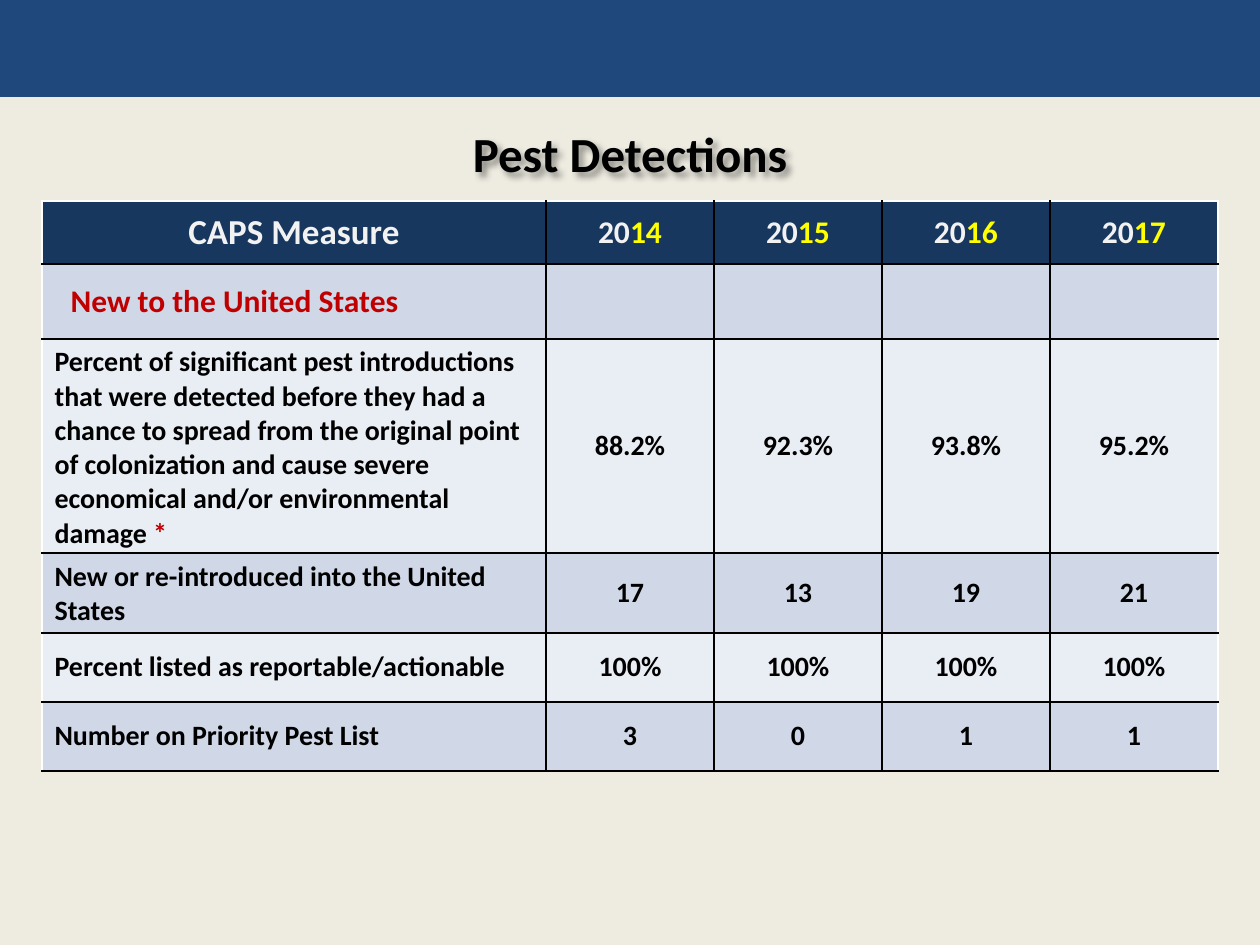
from lxml.etree import SubElement
from pptx import Presentation
from pptx.dml.color import RGBColor
from pptx.enum.shapes import MSO_SHAPE as Shape
from pptx.enum.text import MSO_ANCHOR as Anchor, PP_ALIGN as Align
from pptx.oxml import parse_xml
from pptx.oxml.ns import nsdecls, qn
from pptx.util import Pt

EMU_PER_PX = 914400 / 126
WIDTH, HEIGHT = 1260, 945
BLACK, WHITE, PALE, RED, YELLOW = "000000", "FFFFFF", "F2F2F2", "C00000", "FFFF00"
NAVY, BANDS = "17375E", ("D0D8E8", "E9EDF4")

YEARS = ("14", "15", "16", "17")
SECTION = "New to the United States"
MEASURES = [
    ("Percent of significant pest introductions that were detected before they "
     "had a chance to spread from the original point of colonization and cause "
     "severe economical and/or environmental damage ",
     ("88.2%", "92.3%", "93.8%", "95.2%")),
    ("New or re-introduced into the United States", ("17", "13", "19", "21")),
    ("Percent listed as reportable/actionable", ("100%",) * 4),
    ("Number on Priority Pest List", ("3", "0", "1", "1")),
]
COLUMN_WIDTHS = [504] + [168] * 4
ROW_HEIGHTS = [63, 75, 164, 69, 69, 69]


def px(length):
    return round(length * EMU_PER_PX)


def color(value):
    return RGBColor.from_string(value)


class SlideBuilder:
    font = "Calibri"

    def __init__(self, page):
        self.page = page

    def background(self, fill):
        self.page.background.fill.solid()
        self.page.background.fill.fore_color.rgb = color(fill)

    def band(self, left, top, width, height, fill):
        shape = self.page.shapes.add_shape(
            Shape.RECTANGLE, px(left), px(top), px(width), px(height))
        shape.shadow.inherit = False
        shape.fill.solid()
        shape.fill.fore_color.rgb = color(fill)
        shape.line.fill.background()

    def add_spans(self, para, spans, size, align=Align.CENTER):
        """Fill a paragraph with bold spans given as (text, colour) pairs."""
        para.alignment = align
        for text, ink in spans:
            span = para.add_run()
            span.text = text
            span.font.name = self.font
            span.font.size = Pt(size)
            span.font.bold = True
            span.font.color.rgb = color(ink)

    def title(self, left, top, width, height, text):
        box = self.page.shapes.add_textbox(px(left), px(top), px(width), px(height))
        box.text_frame.word_wrap = True
        box.text_frame.vertical_anchor = Anchor.MIDDLE
        self.add_spans(box.text_frame.paragraphs[0], [(text, BLACK)], 28)
        box._element.spPr.append(parse_xml(
            f'<a:effectLst {nsdecls("a")}><a:outerShdw blurRad="50800" dist="38100" '
            'dir="2700000" algn="tl" rotWithShape="0"><a:srgbClr val="000000">'
            '<a:alpha val="40000"/></a:srgbClr></a:outerShdw></a:effectLst>'))

    def table(self, left, top, widths, heights):
        table = self.page.shapes.add_table(
            len(heights), len(widths), px(left), px(top),
            px(sum(widths)), px(sum(heights))).table
        for column, width in zip(table.columns, widths):
            column.width = px(width)
        for row, height in zip(table.rows, heights):
            row.height = px(height)
        for r in range(len(heights)):
            for c in range(len(widths)):
                self.style_cell(table.cell(r, c), {
                    "lnL": BLACK if c else WHITE,
                    "lnR": BLACK if c < len(widths) - 1 else WHITE,
                    "lnT": BLACK if r else WHITE,
                    "lnB": BLACK,
                }, BANDS[(r - 1) % 2] if r else NAVY)
        return table

    def style_cell(self, cell, borders, fill):
        cell.vertical_anchor = Anchor.MIDDLE
        properties = cell._tc.get_or_add_tcPr()
        for side, ink in borders.items():
            line = SubElement(properties, qn(f"a:{side}"), w=str(int(Pt(1))))
            solid = SubElement(line, qn("a:solidFill"))
            SubElement(solid, qn("a:srgbClr"), val=ink)
        cell.fill.solid()
        cell.fill.fore_color.rgb = color(fill)

    def fill_cell(self, cell, spans, size, align=Align.CENTER, indent=0):
        para = cell.text_frame.paragraphs[0]
        self.add_spans(para, spans, size, align)
        if indent:
            para._p.get_or_add_pPr().set("marL", str(px(indent)))


def main():
    deck = Presentation()
    deck.slide_width, deck.slide_height = px(WIDTH), px(HEIGHT)
    slide = SlideBuilder(deck.slides.add_slide(deck.slide_layouts[6]))
    slide.background("EEECE1")
    slide.band(0, 0, WIDTH, 97, "1F497D")
    slide.title(63, 104, 1134, 98, "Pest Detections")

    table = slide.table(42, 201, COLUMN_WIDTHS, ROW_HEIGHTS)
    slide.fill_cell(table.cell(0, 0), [("CAPS Measure", PALE)], 20)
    for c, year in enumerate(YEARS, 1):
        slide.fill_cell(table.cell(0, c), [("20", PALE), (year, YELLOW)], 18)
    slide.fill_cell(table.cell(1, 0), [(SECTION, RED)], 18, Align.LEFT, indent=16)
    for r, (measure, values) in enumerate(MEASURES, 2):
        spans = [(measure, BLACK)]
        if r == 2:
            spans.append(("*", RED))
        slide.fill_cell(table.cell(r, 0), spans, 16, Align.LEFT)
        for c, value in enumerate(values, 1):
            slide.fill_cell(table.cell(r, c), [(value, BLACK)], 16)
    deck.save("out.pptx")


if __name__ == "__main__":
    main()
